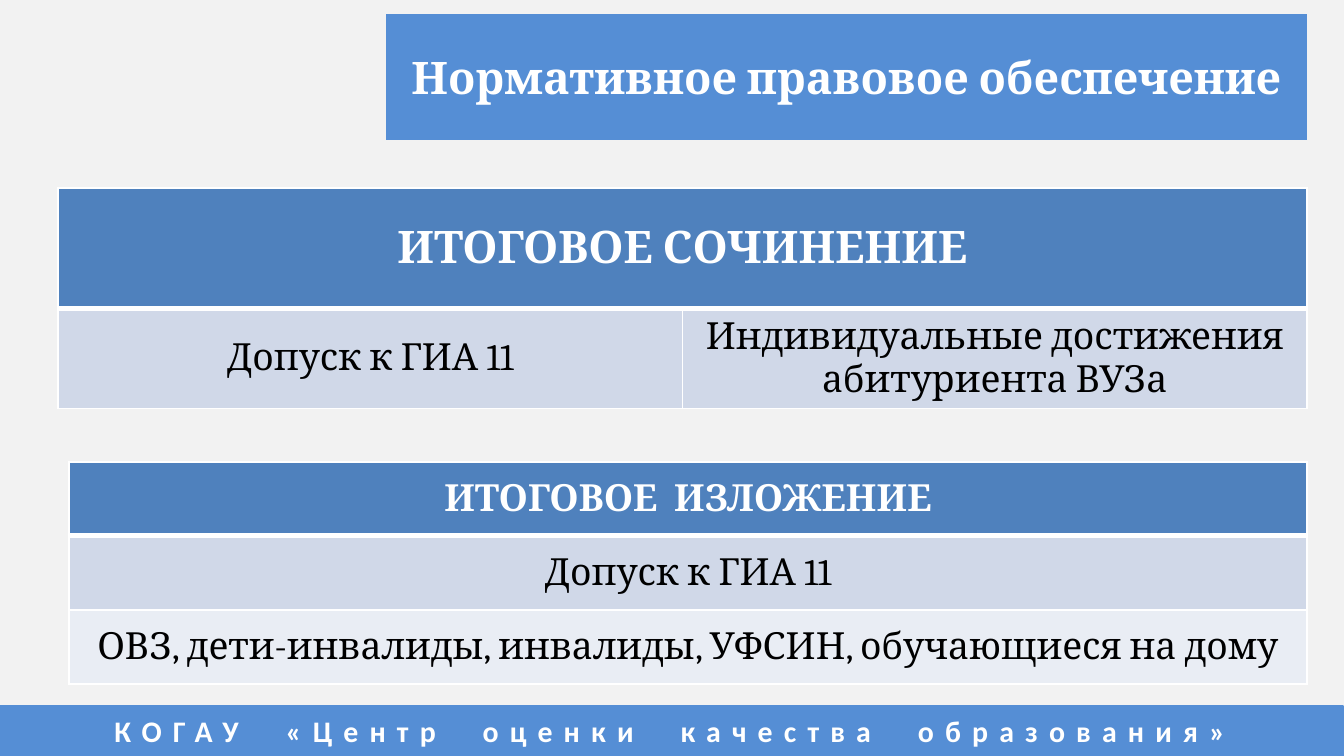
"""Build a slide on the legal framework of the final essay and exposition."""
from dataclasses import dataclass

from lxml.etree import SubElement
from pptx import Presentation
from pptx.dml.color import RGBColor
from pptx.enum.shapes import MSO_SHAPE as Shape
from pptx.enum.text import MSO_ANCHOR as Anchor, MSO_AUTO_SIZE as AutoSize, PP_ALIGN as Align
from pptx.oxml.ns import qn
from pptx.util import Emu, Pt

TITLE = "Нормативное правовое обеспечение"
FOOTER = "КОГАУ  «Центр  оценки  качества  образования»"
TABLES = [
    {
        "box": (58, 188, 1249), "heights": [121, 99], "header_size": 24,
        "rows": [
            ["ИТОГОВОЕ СОЧИНЕНИЕ"],
            ["Допуск к ГИА 11", "Индивидуальные достижения абитуриента ВУЗа"],
        ],
    },
    {
        "box": (69, 462, 1238), "heights": [74, 74, 74], "header_size": 20,
        "rows": [
            ["ИТОГОВОЕ  ИЗЛОЖЕНИЕ"],
            ["Допуск к ГИА 11"],
            ["ОВЗ, дети-инвалиды, инвалиды, УФСИН, обучающиеся на дому"],
        ],
    },
]


@dataclass(frozen=True)
class Theme:
    """Colours, fonts and type sizes of the slide."""
    background: str = "F2F2F2"
    banner: str = "558ED5"
    header: str = "4F81BD"
    bands: tuple = ("D0D8E8", "E9EDF4")
    light: str = "FFFFFF"
    dark: str = "000000"
    serif: str = "Cambria"
    sans: str = "Calibri"
    title_size: int = 24
    body_size: int = 20
    footer_size: int = 16
    footer_spacing: int = 6
    border: int = 1
    header_border: int = 3


THEME = Theme()


def px(length):
    """Turn pixels into EMU."""
    return Emu(round(length * 914400 / 134.4))


def paint(fill, color):
    """Apply a solid colour to a fill."""
    fill.solid()
    fill.fore_color.rgb = RGBColor.from_string(color)


def write(frame, text, size, color, bold, name):
    """Put one centred paragraph into a text frame."""
    frame.text = text
    frame.word_wrap = True
    frame.vertical_anchor = Anchor.MIDDLE
    paragraph = frame.paragraphs[0]
    paragraph.alignment = Align.CENTER
    font = paragraph.font
    font.size, font.bold, font.name = Pt(size), bold, name
    font.color.rgb = RGBColor.from_string(color)
    return paragraph


def set_borders(cell, top, bottom):
    """Draw the four borders of a cell."""
    properties = cell._tc.get_or_add_tcPr()
    widths = {"a:lnL": THEME.border, "a:lnR": THEME.border, "a:lnT": top, "a:lnB": bottom}
    for tag, width in widths.items():
        line = SubElement(properties, qn(tag), w=str(Pt(width)))
        SubElement(SubElement(line, qn("a:solidFill")), qn("a:srgbClr"), val=THEME.light)


def add_title(slide):
    """Place the title banner."""
    title = slide.shapes.title
    title.left, title.top, title.width, title.height = map(px, (386, 14, 921, 126))
    paint(title.fill, THEME.banner)
    write(title.text_frame, TITLE, THEME.title_size, THEME.light, True, THEME.serif)
    title.text_frame.auto_size = AutoSize.NONE


def add_footer(slide):
    """Place the footer strip with widely spaced letters."""
    footer = slide.shapes.add_shape(Shape.RECTANGLE, *map(px, (-1, 706, 1344, 50)))
    footer.shadow.inherit = False
    paint(footer.fill, THEME.banner)
    paint(footer.line.fill, THEME.banner)
    footer.line.width = Pt(0.75)
    paragraph = write(footer.text_frame, FOOTER, THEME.footer_size, THEME.light, True, THEME.sans)
    run_properties = paragraph.runs[0]._r.get_or_add_rPr()
    run_properties.set("spc", str(THEME.footer_spacing * 100))


def add_table(slide, box, heights, header_size, rows):
    """Place a table whose header spans every column."""
    left, top, width = box
    columns = max(map(len, rows))
    table = slide.shapes.add_table(
        len(rows), columns, px(left), px(top), px(width), px(sum(heights))).table
    for column in table.columns:
        column.width = px(width / columns)
    for index, (texts, height) in enumerate(zip(rows, heights)):
        table.rows[index].height = px(height)
        header = index == 0
        color = THEME.header if header else THEME.bands[(index - 1) % 2]
        for cell in table.rows[index].cells:
            set_borders(cell, THEME.header_border if index == 1 else THEME.border,
                        THEME.header_border if header else THEME.border)
            paint(cell.fill, color)
        for cell, text in zip(table.rows[index].cells, texts):
            cell.vertical_anchor = Anchor.MIDDLE
            write(cell.text_frame, text, header_size if header else THEME.body_size,
                  THEME.light if header else THEME.dark, header, THEME.serif)
    if columns > 1:
        table.cell(0, 0).merge(table.cell(0, columns - 1))


def main():
    """Assemble and save the presentation."""
    presentation = Presentation()
    presentation.slide_width, presentation.slide_height = px(1344), px(756)
    slide = presentation.slides.add_slide(presentation.slide_layouts[5])
    paint(slide.background.fill, THEME.background)
    add_title(slide)
    for table in TABLES:
        add_table(slide, **table)
    add_footer(slide)
    presentation.save("out.pptx")


if __name__ == "__main__":
    main()
